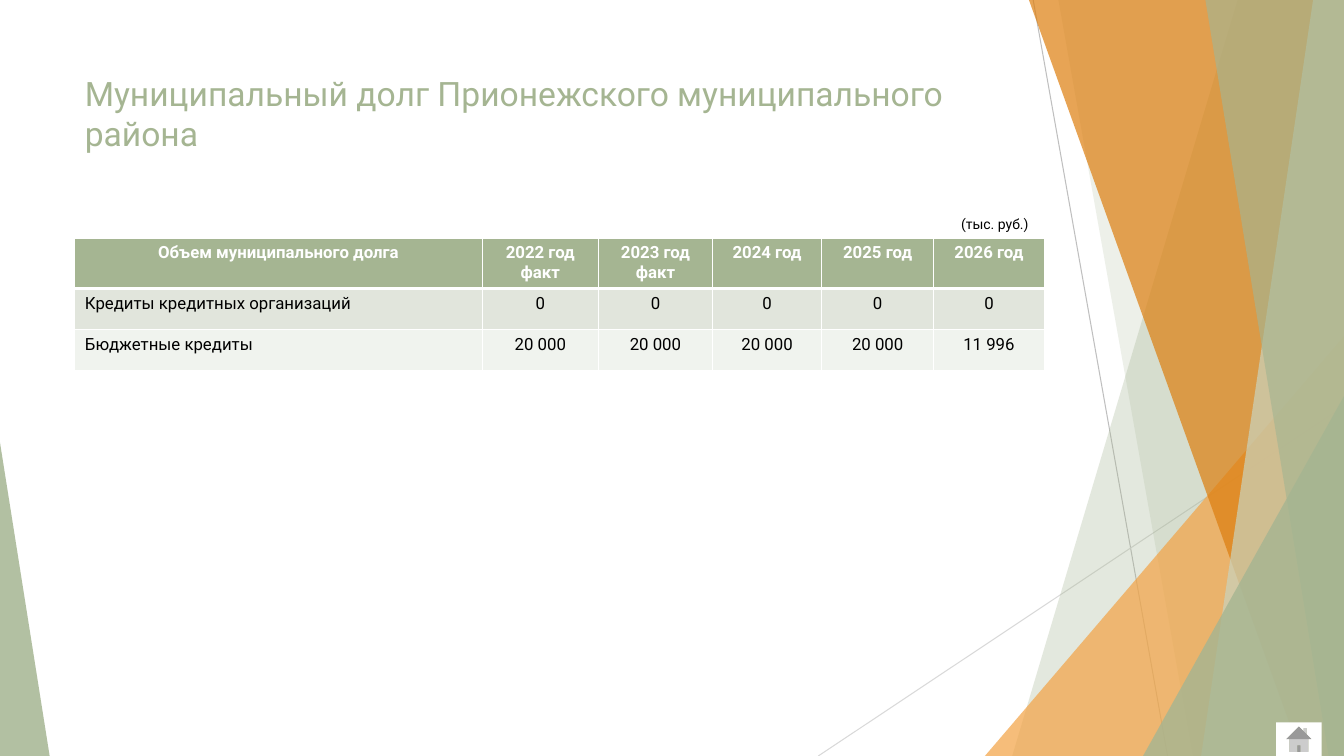
import pptx
import pptx.util
import pptx.dml.color
import pptx.enum.shapes
import pptx.enum.text
import pptx.oxml
import pptx.oxml.ns
import lxml.etree

Pt = pptx.util.Pt
RGBColor = pptx.dml.color.RGBColor
MSO_SHAPE = pptx.enum.shapes.MSO_SHAPE
PP_ALIGN = pptx.enum.text.PP_ALIGN
qn = pptx.oxml.ns.qn

SAGE = RGBColor(0xA5, 0xB5, 0x92)
PALE_SAGE = RGBColor(0xC9, 0xD3, 0xBE)
ORANGE = RGBColor(0xF3, 0xA4, 0x47)
DARK_ORANGE = RGBColor(0xDD, 0x7E, 0x0E)
GREY = RGBColor(0xBF, 0xBF, 0xBF)
LIGHT_GREY = RGBColor(0xD9, 0xD9, 0xD9)
BAND_DARK = RGBColor(0xE1, 0xE5, 0xDC)
BAND_LIGHT = RGBColor(0xF0, 0xF3, 0xEE)
WHITE = RGBColor(0xFF, 0xFF, 0xFF)
BLACK = RGBColor(0, 0, 0)
FONT = "Roboto"
WIDTH, HEIGHT = 960, 540


def paint(shape, color, opacity=100):
    """Give a shape a plain fill with an opacity in percent, no line and no shadow."""
    shape.shadow.inherit = False
    shape.line.fill.background()
    shape.fill.solid()
    shape.fill.fore_color.rgb = color
    if opacity < 100:
        tint = shape.fill._xPr.find(qn("a:solidFill"))[0]
        lxml.etree.SubElement(tint, qn("a:alpha"), val=str(opacity * 1000))


def style_text(frame, size, color, bold=False, align=PP_ALIGN.LEFT):
    for para in frame.paragraphs:
        para.alignment = align
        for span in para.runs:
            span.font.name = FONT
            span.font.size = Pt(size)
            span.font.bold = bold
            span.font.color.rgb = color


deck = pptx.Presentation()
deck.slide_width, deck.slide_height = Pt(WIDTH), Pt(HEIGHT)
page = deck.slides.add_slide(deck.slide_layouts[6])
shapes = page.shapes

# Thin crossing lines
for x1, y1, x2, y2, color in [
    (738, 0, 834, HEIGHT, GREY),
    (WIDTH, 290, 584.5, HEIGHT, LIGHT_GREY),
]:
    line = shapes.add_connector(
        pptx.enum.shapes.MSO_CONNECTOR.STRAIGHT, Pt(x1), Pt(y1), Pt(x2), Pt(y2))
    line.line.color.rgb = color
    line.line.width = Pt(0.75)
    lxml.etree.SubElement(line._element.spPr, qn("a:effectLst"))

# Translucent facets: bands run from a slanted left edge to the right page edge
facets = [
    ("band", (884, 723), SAGE, 30),
    ("band", (756, 852), SAGE, 20),
    ("triangle", (703.5, 240, 256.5, 300, 1), ORANGE, 72),
    ("band", (735, 929.5), DARK_ORANGE, 70),
    ("band", (938, 858), PALE_SAGE, 70),
    ("band", (861, 949), SAGE, 65),
    ("triangle", (816.5, 283, 143.5, 257, 1), SAGE, 80),
    ("triangle", (0, 316, 35.5, 224, 0), SAGE, 85),
]
for kind, geometry, color, opacity in facets:
    if kind == "band":
        top_x, bottom_x = geometry
        builder = shapes.build_freeform(Pt(top_x), 0)
        builder.add_line_segments([
            (Pt(WIDTH), 0), (Pt(WIDTH), Pt(HEIGHT)), (Pt(bottom_x), Pt(HEIGHT))])
        facet = builder.convert_to_shape()
    else:
        *bounds, apex = geometry
        facet = shapes.add_shape(MSO_SHAPE.ISOSCELES_TRIANGLE, *map(Pt, bounds))
        facet.adjustments[0] = apex
    paint(facet, color, opacity)

title = shapes.add_textbox(Pt(53.5), Pt(48.5), Pt(706), Pt(67.5))
title.text_frame.word_wrap = True
title.text_frame.text = "Муниципальный долг Прионежского муниципального района"
style_text(title.text_frame, 24, SAGE)

# Debt table
rows = [
    ["Объем муниципального долга", "2022 год\vфакт", "2023 год\vфакт",
     "2024 год", "2025 год", "2026 год"],
    ["Кредиты кредитных организаций", "0", "0", "0", "0", "0"],
    ["Бюджетные кредиты", "20 000", "20 000", "20 000", "20 000", "11 996"],
]
column_widths = [291, 83, 81.5, 78, 80, 79]
row_heights = [35.5, 29.5, 29.5]
row_fills = [SAGE, BAND_DARK, BAND_LIGHT]
table = shapes.add_table(len(rows), len(column_widths), Pt(53.5), Pt(170),
                         Pt(sum(column_widths)), Pt(sum(row_heights))).table
for column, width in zip(table.columns, column_widths):
    column.width = Pt(width)
for r, values in enumerate(rows):
    table.rows[r].height = Pt(row_heights[r])
    for c, value in enumerate(values):
        cell = table.cell(r, c)
        cell.text_frame.text = value
        header = r == 0
        style_text(cell.text_frame, 12, WHITE if header else BLACK, header,
                   PP_ALIGN.CENTER if header or c else PP_ALIGN.LEFT)
        properties = cell._tc.get_or_add_tcPr()
        for side in ("lnL", "lnR", "lnT", "lnB"):
            heavy = (r, side) in [(0, "lnB"), (1, "lnT")]
            border = lxml.etree.SubElement(
                properties, qn("a:" + side), w=str(Pt(3 if heavy else 1)))
            fill = lxml.etree.SubElement(border, qn("a:solidFill"))
            lxml.etree.SubElement(fill, qn("a:srgbClr"), val=str(WHITE))
        cell.fill.solid()
        cell.fill.fore_color.rgb = row_fills[r]

home_button = shapes.add_shape(
    MSO_SHAPE.ACTION_BUTTON_HOME, Pt(911.5), Pt(516), Pt(32.5), Pt(24))
paint(home_button, WHITE)

unit_label = shapes.add_textbox(Pt(679.5), Pt(150.5), Pt(66.5), Pt(19.5))
unit_label.text_frame.word_wrap = True
unit_label.text_frame.text = "(тыс. руб.)"
style_text(unit_label.text_frame, 10, BLACK)

deck.save("out.pptx")
